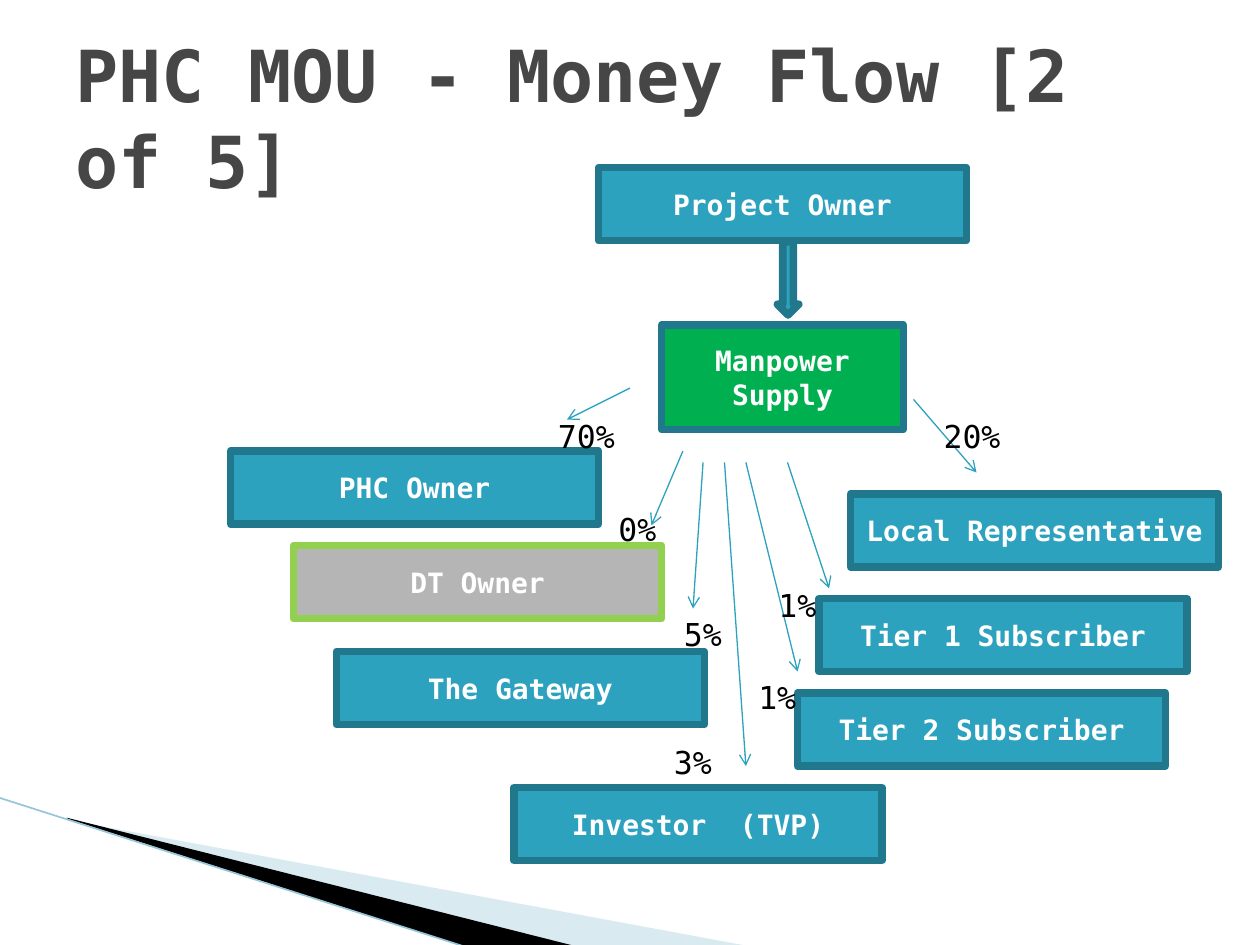
from lxml import etree
from pptx import Presentation
from pptx.dml.color import RGBColor
from pptx.enum.shapes import MSO_CONNECTOR, MSO_SHAPE
from pptx.enum.text import MSO_ANCHOR, MSO_AUTO_SIZE, PP_ALIGN
from pptx.oxml.ns import qn
from pptx.util import Inches, Pt

RECTANGLE, DOWN_ARROW = MSO_SHAPE.RECTANGLE, MSO_SHAPE.DOWN_ARROW
STRAIGHT = MSO_CONNECTOR.STRAIGHT
MIDDLE, TOP = MSO_ANCHOR.MIDDLE, MSO_ANCHOR.TOP
LEFT, CENTER = PP_ALIGN.LEFT, PP_ALIGN.CENTER
NO_AUTO_SIZE, GROW = MSO_AUTO_SIZE.NONE, MSO_AUTO_SIZE.SHAPE_TO_FIT_TEXT

FONT = "DejaVu Sans Mono"
BLACK = RGBColor(0x00, 0x00, 0x00)
WHITE = RGBColor(0xFF, 0xFF, 0xFF)
CHARCOAL = RGBColor(0x46, 0x46, 0x46)
TEAL = RGBColor(0x2D, 0xA2, 0xBF)
DARK_TEAL = RGBColor(0x21, 0x78, 0x8D)
GREEN = RGBColor(0x00, 0xB0, 0x50)
LIME = RGBColor(0x92, 0xD0, 0x50)
GREY = RGBColor(0xB5, 0xB5, 0xB5)
PALE_BLUE = RGBColor(0xA0, 0xCB, 0xDC)
LINE_BLUE = RGBColor(0x97, 0xC5, 0xD8)

PARTY_SIZE = (2.92, 0.58)
PARTIES = [
    ("Manpower Supply", (3.42, 1.25), (1.92, 0.83), GREEN, DARK_TEAL),
    ("Project Owner", (2.92, 0), PARTY_SIZE, TEAL, DARK_TEAL),
    ("Tier 1 Subscriber", (4.67, 3.42), PARTY_SIZE, TEAL, DARK_TEAL),
    ("Tier 2 Subscriber", (4.5, 4.17), PARTY_SIZE, TEAL, DARK_TEAL),
    ("Investor  (TVP)", (2.25, 4.92), PARTY_SIZE, TEAL, DARK_TEAL),
    ("PHC Owner", (0, 2.25), PARTY_SIZE, TEAL, DARK_TEAL),
    ("DT Owner", (0.5, 3), PARTY_SIZE, GREY, LIME),
    ("The Gateway", (0.84, 3.84), PARTY_SIZE, TEAL, DARK_TEAL),
    ("Local Representative", (4.92, 2.59), PARTY_SIZE, TEAL, DARK_TEAL),
]
SHARES = [
    ("70%", (3.17, 1.75), (2.67, 2), (2.5, 1.93)),
    ("0%", (3.59, 2.25), (3.34, 2.84), (2.98, 2.67)),
    ("5%", (3.75, 2.34), (3.67, 3.5), (3.5, 3.5)),
    ("3%", (3.92, 2.34), (4.09, 4.75), (3.42, 4.52)),
    ("1%", (4.09, 2.34), (4.5, 4), (4.09, 4)),
    ("1%", (4.42, 2.34), (4.75, 3.34), (4.25, 3.27)),
    ("20%", (5.42, 1.84), (5.92, 2.42), (5.56, 1.93)),
]


def write_text(shape, text, size=16, color=WHITE, bold=False, align=LEFT,
               anchor=MIDDLE, wrap=True, auto_size=NO_AUTO_SIZE):
    """Write one formatted paragraph into a shape."""
    frame = shape.text_frame
    frame.text = text
    frame.word_wrap = wrap
    frame.auto_size = auto_size
    frame.vertical_anchor = anchor
    paragraph = frame.paragraphs[0]
    paragraph.alignment = align
    font = paragraph.runs[0].font
    font.name, font.size, font.bold = FONT, Pt(size), bold
    font.color.rgb = color


def add_block(slide, kind, left, top, width, height, fill, outline):
    """Add a filled preset shape with a thick outline."""
    shape = slide.shapes.add_shape(
        kind, Inches(left), Inches(top), Inches(width), Inches(height))
    shape.shadow.inherit = False
    shape.fill.solid()
    shape.fill.fore_color.rgb = fill
    shape.line.color.rgb = outline
    shape.line.width = Pt(4.33)
    return shape


def add_line(slide, start, end, color, width, arrow=False):
    """Add a straight line, with an open arrowhead at its end if asked."""
    connector = slide.shapes.add_connector(
        STRAIGHT, *(Inches(value) for value in (*start, *end)))
    connector.line.color.rgb = color
    connector.line.width = Pt(width)
    properties = connector.element.spPr
    if arrow:
        outline = properties.find(qn("a:ln"))
        etree.SubElement(outline, qn("a:tailEnd"), type="arrow")
    etree.SubElement(properties, qn("a:effectLst"))


def add_wedge(slide, points, color, opacity=100):
    """Add a closed polygon without outline."""
    corners = [(Inches(x), Inches(y)) for x, y in points]
    builder = slide.shapes.build_freeform(*corners[0])
    builder.add_line_segments(corners[1:], close=True)
    wedge = builder.convert_to_shape()
    wedge.shadow.inherit = False
    wedge.fill.solid()
    wedge.fill.fore_color.rgb = color
    wedge.line.fill.background()
    fill_color = wedge.element.spPr.find(qn("a:solidFill"))[0]
    etree.SubElement(fill_color, qn("a:alpha"), val=str(opacity * 1000))


def draw_corner(slide, left, top):
    """Draw the sweeping wedges at the bottom left."""
    def place(*points):
        return [(left + x, top + y) for x, y in points]

    add_wedge(slide, place((0.55, 0.18), (5.95, 1.18), (4.56, 1.18), (0.55, 0.17)),
              PALE_BLUE, opacity=40)
    add_wedge(slide, place((0.53, 0.16), (4.57, 1.18), (3.72, 1.19), (0.54, 0.17)), BLACK)
    add_line(slide, *place((-0.01, 0), (3.71, 1.19)), LINE_BLUE, 0.95)


def draw_title(slide, left, top, width, height):
    """Place the slide title in its box."""
    title = slide.shapes.title
    title.left, title.top = Inches(left), Inches(top)
    title.width, title.height = Inches(width), Inches(height)
    write_text(title, "PHC MOU - Money Flow [2 of 5]", size=41, color=CHARCOAL, bold=True)


def draw_money_flow(slide, left, top):
    """Draw the parties, the payment arrows and their shares."""
    for name, (x, y), size, fill, outline in PARTIES:
        party = add_block(slide, RECTANGLE, left + x, top + y, *size, fill, outline)
        write_text(party, name, bold=True, align=CENTER)
    add_block(slide, DOWN_ARROW, left + 4.34, top + 0.59, 0.17, 0.58, TEAL, DARK_TEAL)
    for share, start, end, (x, y) in SHARES:
        add_line(slide, (left + start[0], top + start[1]), (left + end[0], top + end[1]),
                 TEAL, 0.75, arrow=True)
        width = 0.21 + 0.16 * len(share)
        label = slide.shapes.add_textbox(
            Inches(left + x), Inches(top + y), Inches(width), Inches(0.4))
        write_text(label, share, size=18, color=BLACK, anchor=TOP, wrap=False, auto_size=GROW)


def main():
    """Build and save the presentation."""
    presentation = Presentation()
    presentation.slide_width, presentation.slide_height = Inches(10), Inches(7.5)
    slide = presentation.slides.add_slide(presentation.slide_layouts[5])
    draw_corner(slide, 0, 6.33)
    draw_title(slide, 0.5, 0.3, 9, 1.25)
    draw_money_flow(slide, 1.83, 1.33)
    presentation.save("out.pptx")


if __name__ == "__main__":
    main()
